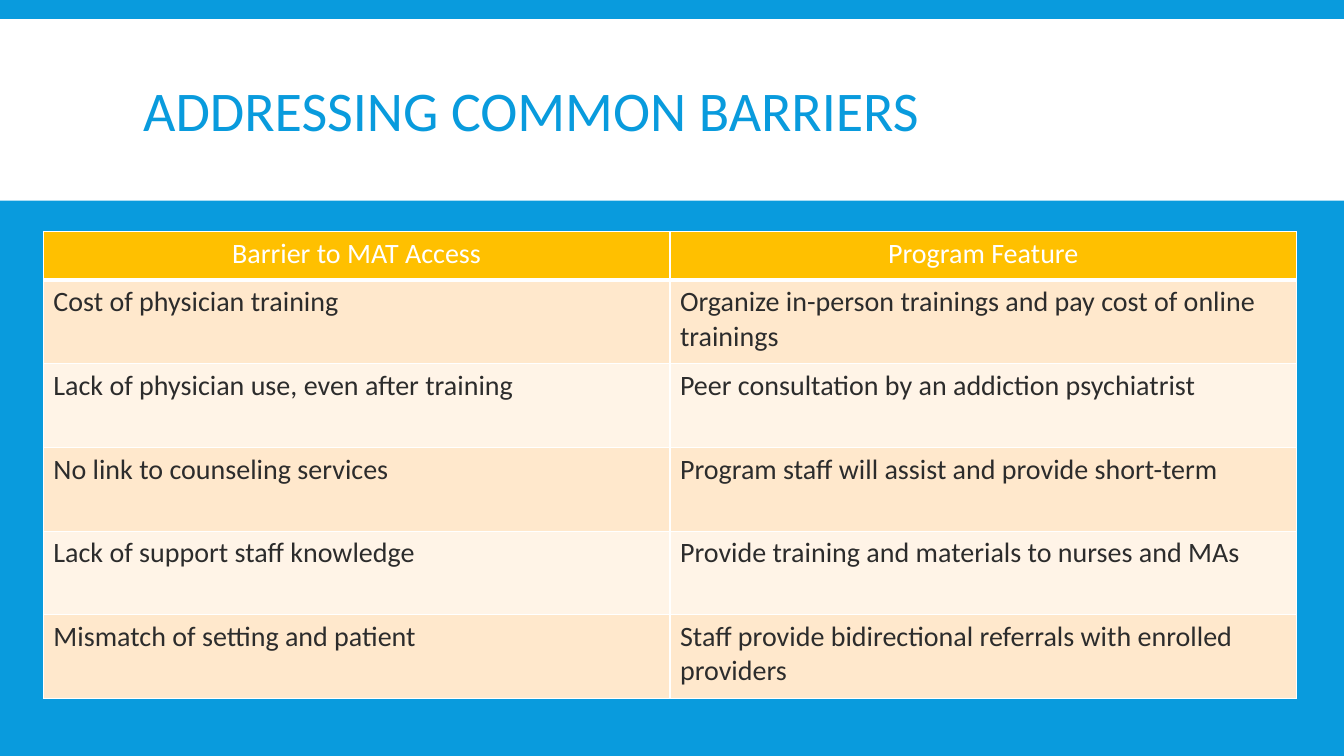
from lxml import etree
from pptx import Presentation
from pptx.dml.color import RGBColor
from pptx.enum.shapes import MSO_SHAPE
from pptx.enum.text import MSO_ANCHOR, MSO_AUTO_SIZE, PP_ALIGN
from pptx.oxml.ns import qn
from pptx.util import Pt

RECT = MSO_SHAPE.RECTANGLE
MIDDLE = MSO_ANCHOR.MIDDLE
NO_FIT = MSO_AUTO_SIZE.NONE
LEFT, CENTER = PP_ALIGN.LEFT, PP_ALIGN.CENTER

SCALE = 9144  # EMU per px, 100 px to the inch
FONT = "Calibri"
BLUE, WHITE, GOLD, DARK = "099BDD", "FFFFFF", "FFC000", "2C2C2C"
BANDS = ["FFF4E7", "FFE8CC"]
ROWS = [
    ("Barrier to MAT Access", "Program Feature"),
    ("Cost of physician training",
     "Organize in-person trainings and pay cost of online trainings"),
    ("Lack of physician use, even after training",
     "Peer consultation by an addiction psychiatrist"),
    ("No link to counseling services",
     "Program staff will assist and provide short-term"),
    ("Lack of support staff knowledge",
     "Provide training and materials to nurses and MAs"),
    ("Mismatch of setting and patient",
     "Staff provide bidirectional referrals with enrolled providers"),
]


def px(num):
    return num * SCALE


def paint(fill, color):
    fill.solid()
    fill.fore_color.rgb = RGBColor.from_string(color)


def write(para, text, size, color, align=LEFT):
    para.alignment = align
    run = para.add_run()
    run.text = text
    run.font.name = FONT
    run.font.size = Pt(size)
    run.font.color.rgb = RGBColor.from_string(color)


def add_band(slide, left, top, width, height):
    band = slide.shapes.add_shape(RECT, *map(px, (left, top, width, height)))
    band.shadow.inherit = False
    paint(band.fill, WHITE)
    band.line.fill.background()


def set_title(slide, text, left, top, width, height):
    """Place the title and raise it above the band."""
    title = slide.shapes.title
    title.left, title.top = px(left), px(top)
    title.width, title.height = px(width), px(height)
    frame = title.text_frame
    frame.word_wrap = True
    frame.auto_size = NO_FIT
    frame.vertical_anchor = MIDDLE
    para = frame.paragraphs[0]
    para.line_spacing = 0.85
    write(para, text, 40, BLUE)
    title.element.getparent().append(title.element)


def add_rules(cell, base):
    """Draw white cell borders, with the bottom one base points wide."""
    props = cell._tc.get_or_add_tcPr()
    for spot, (side, width) in enumerate(zip("LRTB", (1, 1, 1, base))):
        line = etree.Element(qn(f"a:ln{side}"), w=str(Pt(width)))
        fill = etree.SubElement(line, qn("a:solidFill"))
        etree.SubElement(fill, qn("a:srgbClr"), val=WHITE)
        props.insert(spot, line)


def add_grid(slide, rows, left, top, width, head, step):
    """Add a table with a header row head px high and others step px high."""
    count, cols = len(rows), len(rows[0])
    high = head + step * (count - 1)
    grid = slide.shapes.add_table(
        count, cols, *map(px, (left, top, width, high))).table
    for i, texts in enumerate(rows):
        first = i == 0
        grid.rows[i].height = px(head if first else step)
        for j, text in enumerate(texts):
            cell = grid.cell(i, j)
            paint(cell.fill, GOLD if first else BANDS[i % 2])
            add_rules(cell, 3 if first else 1)
            write(cell.text_frame.paragraphs[0], text, 20,
                  WHITE if first else DARK, CENTER if first else LEFT)


def main():
    deck = Presentation()
    deck.slide_width, deck.slide_height = px(1333), px(750)
    slide = deck.slides.add_slide(deck.slide_layouts[5])
    paint(slide.background.fill, BLUE)
    add_band(slide, 0, 19, 1333, 180)
    set_title(slide, "ADDRESSING COMMON BARRIERS", 132, 31, 1070, 165)
    add_grid(slide, ROWS, 43, 230, 1243, 48, 83)
    deck.save("out.pptx")


if __name__ == "__main__":
    main()
